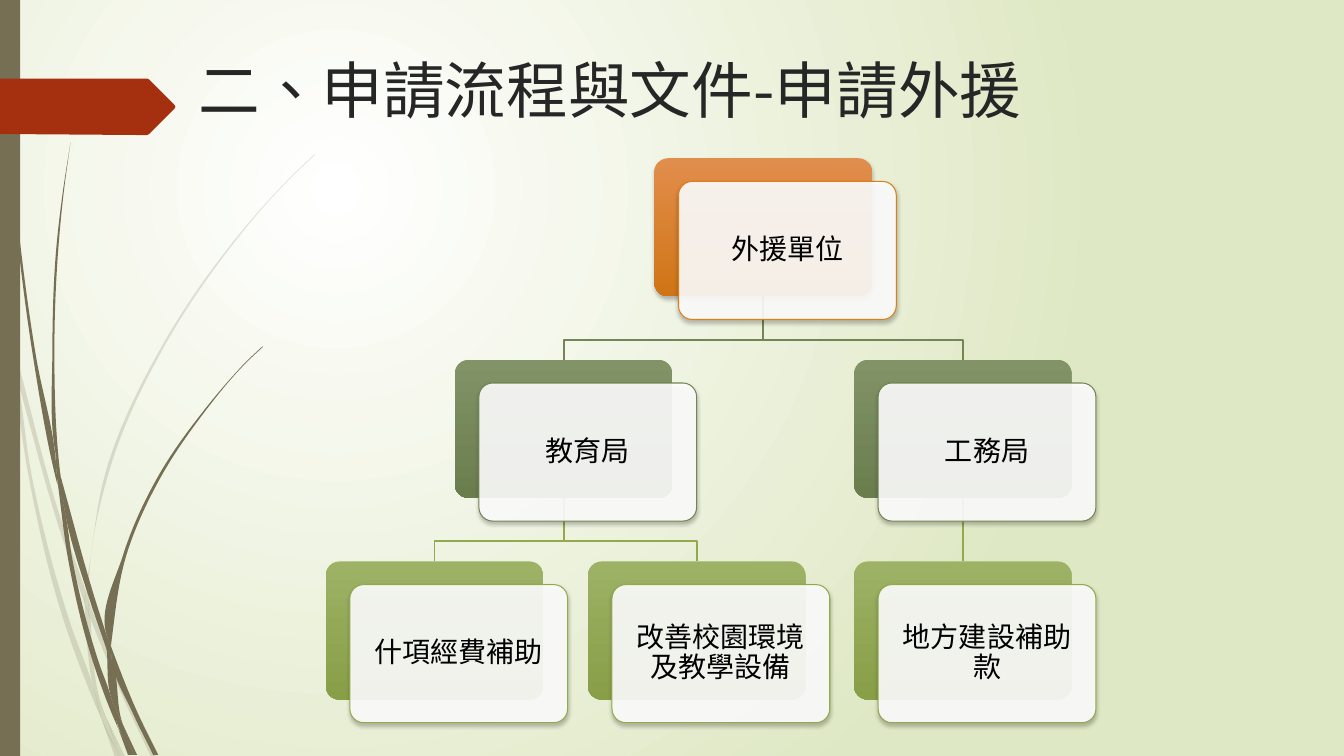
from dataclasses import dataclass
from typing import Optional

import lxml.etree
import pptx
import pptx.dml.color
import pptx.enum.lang
import pptx.enum.shapes
import pptx.enum.text
import pptx.oxml.ns
import pptx.util

# Grid: 100 columns and 100 rows to the inch
CELL = pptx.util.Inches(0.01)
COLUMNS, ROWS = 1333, 750
FONT = "Noto Sans CJK SC"
COLORS = {"white": "FFFFFF", "black": "000000", "title": "262626", "background": "DFE8C4",
          "grass": "766F54", "arrow": "A53010"}
Point = tuple[int, int]


@dataclass(frozen=True)
class Strand:
    """A blade of grass between two smooth edges running the same way."""
    left: tuple[Point, ...]
    right: tuple[Point, ...]


@dataclass(frozen=True)
class Level:
    top: int
    line: str
    gradient: tuple[str, str]


@dataclass(frozen=True)
class Box:
    text: str
    column: int
    level: Level
    parent: Optional["Box"] = None


PALE_GRASS = (
    Strand(((11, 350), (9, 322), (0, 282)), ((11, 350), (10, 344), (0, 299))),
    Strand(((14, 345), (62, 520), (85, 586)), ((17, 376), (58, 522), (84, 599))),
    Strand(((88, 596), (92, 607), (127, 692), (155, 751)), ((88, 610), (123, 694), (150, 751))),
    Strand(((105, 711), (124, 751)), ((105, 711), (119, 751))),
    Strand(((11, 350), (17, 376), (31, 469), (70, 619), (93, 683), (101, 714)),
           ((11, 350), (28, 470), (65, 621), (92, 693), (101, 714))),
    Strand(((84, 599), (87, 646), (93, 683), (96, 692), (105, 711)),
           ((84, 599), (88, 608), (91, 646), (103, 706), (105, 711))),
    Strand(((312, 153), (289, 175), (268, 197), (228, 244), (158, 348), (107, 461), (85, 584)),
           ((312, 154), (290, 175), (268, 198), (229, 245), (160, 349), (110, 462), (88, 584),
            (88, 596))),
    Strand(((101, 714), (114, 751)), ((101, 714), (119, 751))),
    Strand(((85, 586), (84, 599), (88, 608)), ((85, 586), (88, 596), (88, 610))),
    Strand(((93, 683), (101, 714), (119, 751)), ((93, 683), (96, 692), (105, 711), (119, 751))),
)
DARK_GRASS = (
    Strand(((3, 0), (4, 48), (7, 110), (17, 233), (33, 355), (56, 477), (57, 481)),
           ((4, 0), (5, 48), (8, 109), (19, 232), (36, 355), (55, 453), (57, 481))),
    Strand(((60, 472), (93, 590), (106, 631)), ((60, 472), (64, 505), (88, 592), (106, 645))),
    Strand(((110, 641), (113, 649), (136, 706), (157, 749)),
           ((110, 641), (111, 656), (132, 708), (152, 749))),
    Strand(((57, 477), (64, 505), (72, 556), (98, 657), (110, 691), (117, 722)),
           ((57, 477), (68, 557), (93, 659), (111, 708), (117, 722))),
    Strand(((70, 141), (62, 193), (56, 245), (52, 349), (55, 449), (60, 472)),
           ((70, 141), (63, 193), (58, 245), (54, 349), (58, 453), (60, 472))),
    Strand(((122, 719), (136, 749)), ((122, 719), (133, 749))),
    Strand(((55, 449), (60, 472), (64, 505)), ((55, 449), (57, 477), (64, 505))),
    Strand(((260, 344), (245, 358), (231, 373), (204, 405), (156, 474), (122, 551), (106, 631),
            (110, 641)),
           ((261, 344), (245, 359), (231, 374), (205, 406), (158, 476), (125, 552), (111, 633),
            (110, 641))),
    Strand(((117, 722), (131, 749)), ((117, 722), (127, 749))),
    Strand(((106, 645), (110, 691), (116, 706), (122, 719)),
           ((106, 645), (111, 656), (121, 716), (122, 719))),
    Strand(((106, 631), (106, 645), (111, 656)), ((106, 631), (110, 641), (111, 656))),
    Strand(((110, 691), (116, 717), (130, 749)), ((110, 691), (116, 706), (122, 719), (133, 749))),
)
ARROW = ((0, 78), (146, 78), (148, 79), (173, 104), (174, 106), (173, 108), (148, 133),
         (146, 134), (136, 134), (0, 133))

# Organisation chart
BOX_WIDTH, BOX_HEIGHT = 216, 137
CARD_RIGHT, CARD_DOWN, TEXT_INSET, ELBOW_RISE = 24, 23, 4, 20
TOP = Level(157, "DE7E18", ("E18D4C", "CF7516"))
MIDDLE = Level(357, "728653", ("819367", "6A7D4D"))
BOTTOM = Level(557, "92AA4C", ("9DB265", "889E47"))
AID = Box("外援單位", 649, TOP)
EDUCATION = Box("教育局", 451, MIDDLE, AID)
WORKS = Box("工務局", 847, MIDDLE, AID)
BOXES = (AID, EDUCATION, Box("什項經費補助", 323, BOTTOM, EDUCATION),
         Box("改善校園環境及教學設備", 583, BOTTOM, EDUCATION),
         WORKS, Box("地方建設補助款", 847, BOTTOM, WORKS))


def add_child(parent, tag: str, **attributes: str):
    return lxml.etree.SubElement(parent, pptx.oxml.ns.qn(tag), attributes)


def fill_solid(shape, color: str, opacity: int = 100) -> None:
    shape.fill.solid()
    shape.fill.fore_color.rgb = pptx.dml.color.RGBColor.from_string(color)
    if opacity < 100:
        color_element = shape._element.spPr.find(".//" + pptx.oxml.ns.qn("a:srgbClr"))
        add_child(color_element, "a:alpha", val=str(opacity * 1000))


def fill_gradient(fill, colors: tuple[str, str]) -> None:
    fill.gradient()
    for stop, color in zip(fill.gradient_stops, colors):
        stop.color.rgb = pptx.dml.color.RGBColor.from_string(color)


def set_line(shape, color: str, width: float) -> None:
    shape.line.color.rgb = pptx.dml.color.RGBColor.from_string(color)
    shape.line.width = pptx.util.Pt(width)


def add_shadow(shape) -> None:
    effects = shape._element.spPr.find(pptx.oxml.ns.qn("a:effectLst"))
    shadow = add_child(effects, "a:outerShdw", blurRad=str(pptx.util.Pt(3)),
                       dist=str(pptx.util.Pt(2)), dir="5400000", rotWithShape="0")
    add_child(add_child(shadow, "a:srgbClr", val=COLORS["black"]), "a:alpha", val="25000")


def draw_text(slide, text: str, size: int, color: str, left: int, top: int, width: int,
              height: int):
    frame = slide.shapes.add_textbox(*(n * CELL for n in (left, top, width, height))).text_frame
    frame.word_wrap = True
    paragraph = frame.paragraphs[0]
    paragraph.text = text
    font = paragraph.font
    font.name, font.size = FONT, pptx.util.Pt(size)
    font.color.rgb = pptx.dml.color.RGBColor.from_string(color)
    font.language_id = pptx.enum.lang.MSO_LANGUAGE_ID.TRADITIONAL_CHINESE
    add_child(font._element, "a:ea", typeface=FONT)
    return frame


def curve_through(points: tuple[Point, ...]) -> list[Point]:
    """Return the points with two Bezier handles between each pair."""
    knots = [complex(*point) for point in points]
    chords = [end - start for start, end in zip(knots, knots[1:])]
    pulls = [chord / abs(chord) ** 2 for chord in chords]
    tangents = [a + b for a, b in zip([0, *pulls], [*pulls, 0])]
    curve = knots[:1]
    for i, chord in enumerate(chords):
        first, second = (t / abs(t) * abs(chord) / 3 for t in tangents[i:i + 2])
        curve += [knots[i] + first, knots[i + 1] - second, knots[i + 1]]
    return [(knot.real, knot.imag) for knot in curve]


def draw_outline(slide, points, closed: bool = True):
    vertices = [(x * CELL, y * CELL) for x, y in points]
    builder = slide.shapes.build_freeform(*vertices[0], scale=1.0)
    builder.add_line_segments(vertices[1:], close=closed)
    shape = builder.convert_to_shape()
    shape.shadow.inherit = False
    shape.fill.background()
    shape.line.fill.background()
    return shape


def draw_strand(slide, strand: Strand, opacity: int) -> None:
    left, right = curve_through(strand.left), curve_through(strand.right)[::-1]
    bridge = [left[-1], right[0]]
    shape = draw_outline(slide, left + bridge + right)
    fill_solid(shape, COLORS["grass"], opacity)
    # Every three straight segments become one cubic curve
    segments = list(shape._element.iter(pptx.oxml.ns.qn("a:lnTo")))
    for first in range(0, len(left + bridge + right) - 1, 3):
        curve = lxml.etree.Element(pptx.oxml.ns.qn("a:cubicBezTo"))
        segments[first].addprevious(curve)
        for segment in segments[first:first + 3]:
            curve.append(segment[0])
            segment.getparent().remove(segment)


def draw_block(slide, kind, left: int, top: int, width: int, height: int):
    shape = slide.shapes.add_shape(kind, *(n * CELL for n in (left, top, width, height)))
    shape.shadow.inherit = False
    shape.line.fill.background()
    return shape


def draw_branch(slide, box: Box) -> None:
    start, end = (item.column + BOX_WIDTH // 2 for item in (box.parent, box))
    top, bottom = box.parent.level.top + BOX_HEIGHT, box.level.top
    bend = [(start, bottom - ELBOW_RISE), (end, bottom - ELBOW_RISE)] if start != end else []
    branch = draw_outline(slide, [(start, top), *bend, (end, bottom)], closed=False)
    set_line(branch, box.level.line, 1.25)


def draw_box(slide, box: Box) -> None:
    left, top = box.column + CARD_RIGHT, box.level.top + CARD_DOWN
    back, card = (draw_block(slide, pptx.enum.shapes.MSO_SHAPE.ROUNDED_RECTANGLE, x, y,
                             BOX_WIDTH, BOX_HEIGHT)
                  for x, y in ((box.column, box.level.top), (left, top)))
    back.adjustments[0] = card.adjustments[0] = 0.1
    fill_gradient(back.fill, box.level.gradient)
    back.fill.gradient_angle = 270
    if box.parent is None:
        add_shadow(back)
    fill_solid(card, COLORS["white"], 90)
    set_line(card, box.level.line, 0.75)
    add_shadow(card)
    frame = draw_text(slide, box.text, 20, COLORS["black"], left + TEXT_INSET, top + TEXT_INSET,
                      BOX_WIDTH - 2 * TEXT_INSET, BOX_HEIGHT - 2 * TEXT_INSET)
    frame.margin_left = frame.margin_right = frame.margin_top = frame.margin_bottom = 8 * CELL
    frame.vertical_anchor = pptx.enum.text.MSO_ANCHOR.MIDDLE
    frame.paragraphs[0].alignment = pptx.enum.text.PP_ALIGN.CENTER
    frame.paragraphs[0].line_spacing = 0.9


def draw_background(slide) -> None:
    fill_gradient(slide.background.fill, (COLORS["white"], COLORS["background"]))
    linear = slide._element.find(".//" + pptx.oxml.ns.qn("a:lin"))
    circle = add_child(linear.getparent(), "a:path", path="circle")
    add_child(circle, "a:fillToRect", l="50000", t="50000", r="100000", b="100000")
    linear.getparent().remove(linear)


def main() -> None:
    presentation = pptx.Presentation()
    presentation.slide_width, presentation.slide_height = COLUMNS * CELL, ROWS * CELL
    slide = presentation.slides.add_slide(presentation.slide_layouts[6])

    # Backdrop: grass, side bar and arrow
    draw_background(slide)
    for strands, opacity in ((PALE_GRASS, 20), (DARK_GRASS, 100)):
        for strand in strands:
            draw_strand(slide, strand, opacity)
    side_bar = draw_block(slide, pptx.enum.shapes.MSO_SHAPE.RECTANGLE, 0, 0, 20, ROWS)
    fill_solid(side_bar, COLORS["grass"])
    fill_solid(draw_outline(slide, ARROW), COLORS["arrow"])

    # Title and organisation chart
    draw_text(slide, "二、申請流程與文件-申請外援", 44, COLORS["title"], 187, 47, 975, 140)
    for box in BOXES[1:]:
        draw_branch(slide, box)
    for box in BOXES:
        draw_box(slide, box)
    presentation.save("out.pptx")


if __name__ == "__main__":
    main()
